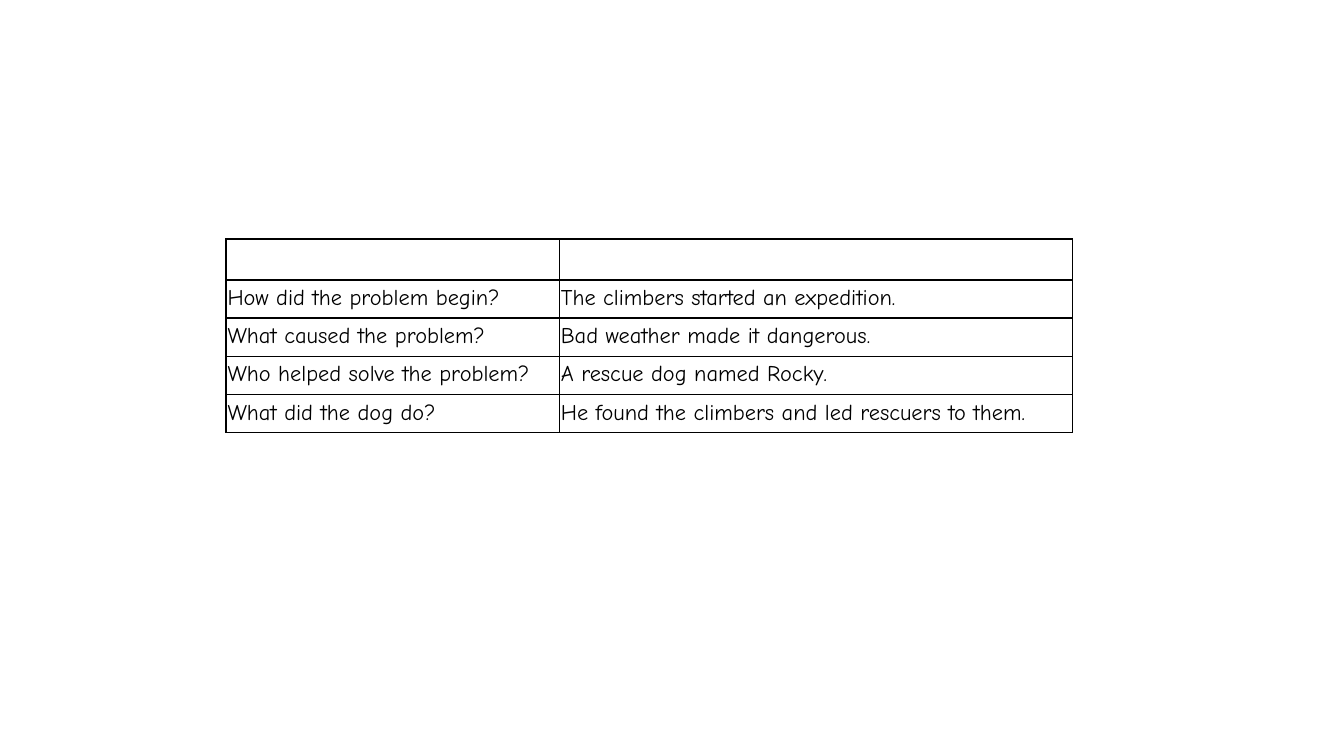
import dataclasses

import lxml.etree
import pptx
import pptx.dml.color
import pptx.oxml.ns
import pptx.util
from pptx.util import Cm


@dataclasses.dataclass(frozen=True)
class Theme:
    font: str = "Comic Neue"
    ink: str = "000000"
    text_size: int = 12
    border_width: int = 1


theme = Theme()


def add_borders(cell):
    properties = cell._tc.get_or_add_tcPr()
    for position, side in enumerate(("lnL", "lnR", "lnT", "lnB")):
        line = lxml.etree.Element(
            pptx.oxml.ns.qn(f"a:{side}"), w=str(pptx.util.Pt(theme.border_width))
        )
        fill = lxml.etree.SubElement(line, pptx.oxml.ns.qn("a:solidFill"))
        lxml.etree.SubElement(fill, pptx.oxml.ns.qn("a:srgbClr"), val=theme.ink)
        properties.insert(position, line)


# Slide
presentation = pptx.Presentation()
presentation.slide_width = Cm(25.4)
presentation.slide_height = Cm(14.29)
slide = presentation.slides.add_slide(presentation.slide_layouts[6])

# Questions and answers, below an empty header row
story = [
    ("", ""),
    ("How did the problem begin?", "The climbers started an expedition."),
    ("What caused the problem?", "Bad weather made it dangerous."),
    ("Who helped solve the problem?", "A rescue dog named Rocky."),
    ("What did the dog do?", "He found the climbers and led rescuers to them."),
]
column_widths = [Cm(6.3), Cm(9.7)]
header_height, row_height = Cm(0.76), Cm(0.72)

# Table grid
story_table = slide.shapes.add_table(
    len(story), len(column_widths), Cm(4.27), Cm(4.52),
    sum(column_widths), header_height + row_height * (len(story) - 1),
).table
story_table.first_row = False
story_table.horz_banding = False
for column, width in zip(story_table.columns, column_widths):
    column.width = width
for index, row in enumerate(story_table.rows):
    row.height = row_height if index else header_height

# Cells
for row, entries in zip(story_table.rows, story):
    for cell, entry in zip(row.cells, entries):
        cell.fill.background()
        add_borders(cell)
        cell.margin_left = cell.margin_right = Cm(0.03)
        cell.margin_top = cell.margin_bottom = Cm(0.03 if entry else 0)
        if not entry:
            continue
        cell.text_frame.text = entry
        paragraph = cell.text_frame.paragraphs[0]
        paragraph.line_spacing = 1.15
        paragraph.space_before = pptx.util.Pt(12)
        font = paragraph.runs[0].font
        font.name = theme.font
        font.size = pptx.util.Pt(theme.text_size)
        font.color.rgb = pptx.dml.color.RGBColor.from_string(theme.ink)

presentation.save("out.pptx")
